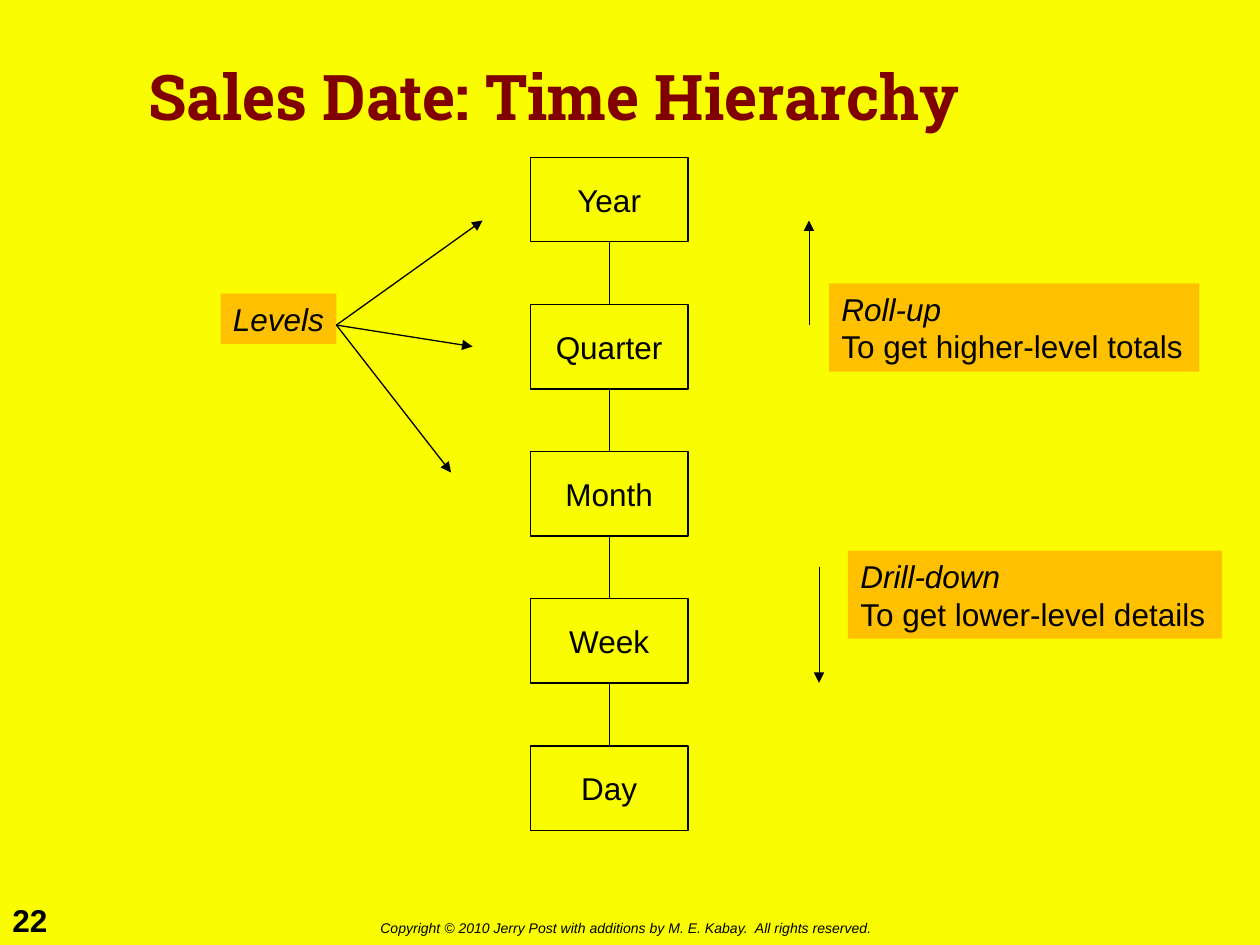
from lxml import etree
from pptx import Presentation
from pptx.dml.color import RGBColor
from pptx.enum.shapes import MSO_CONNECTOR as CONN, MSO_SHAPE as SHAPE
from pptx.enum.text import MSO_ANCHOR as ANCHOR, MSO_AUTO_SIZE as AUTO, PP_ALIGN as ALIGN
from pptx.oxml.ns import qn
from pptx.util import Inches, Pt

YELLOW = RGBColor(0xFA, 0xFD, 0x00)
ORANGE = RGBColor(0xFF, 0xC0, 0x00)
MAROON = RGBColor(0x80, 0x00, 0x00)
BLACK = RGBColor(0x00, 0x00, 0x00)
BOTTOM, TOP = 2, 0


def add_text(p, text, size=18, font="Arial", color=BLACK, bold=False, italic=False):
    r = p.add_run()
    r.text = text
    r.font.name, r.font.size = font, Pt(size)
    r.font.bold, r.font.italic = bold, italic
    r.font.color.rgb = color


class SlideBuilder:
    def __init__(self, slide):
        self.s = slide
        fill = slide.background.fill
        fill.solid()
        fill.fore_color.rgb = YELLOW

    def title(self, text, x, y, w, h):
        sp = self.s.shapes.title
        sp.left, sp.top, sp.width, sp.height = map(Inches, (x, y, w, h))
        tf = sp.text_frame
        tf.vertical_anchor = ANCHOR.MIDDLE
        p = tf.paragraphs[0]
        p.alignment, p.line_spacing = ALIGN.LEFT, 0.9
        add_text(p, text, size=36, font="Roboto Slab", color=MAROON, bold=True)

    def label(self, text, x, y, w, h, **style):
        sp = self.s.shapes.add_textbox(*map(Inches, (x, y, w, h)))
        tf = sp.text_frame
        tf.word_wrap, tf.auto_size = False, AUTO.SHAPE_TO_FIT_TEXT
        add_text(tf.paragraphs[0], text, **style)

    def rect(self, x, y, w, h):
        sp = self.s.shapes.add_shape(SHAPE.RECTANGLE, *map(Inches, (x, y, w, h)))
        sp.shadow.inherit = False
        sp.text_frame.word_wrap = False
        return sp

    def level(self, text, x, y, w, h):
        sp = self.rect(x, y, w, h)
        sp.fill.background()
        sp.line.color.rgb, sp.line.width = BLACK, Pt(0.75)
        tf = sp.text_frame
        tf.vertical_anchor = ANCHOR.MIDDLE
        tf.paragraphs[0].alignment = ALIGN.CENTER
        add_text(tf.paragraphs[0], text)
        return sp

    def callout(self, term, x, y, w, h, meaning=None):
        sp = self.rect(x, y, w, h)
        sp.fill.solid()
        sp.fill.fore_color.rgb = ORANGE
        sp.line.fill.background()
        tf = sp.text_frame
        tf.vertical_anchor, tf.auto_size = ANCHOR.TOP, AUTO.SHAPE_TO_FIT_TEXT
        tf.paragraphs[0].alignment = ALIGN.LEFT
        add_text(tf.paragraphs[0], term, italic=True)
        if meaning:
            p = tf.add_paragraph()
            p.alignment = ALIGN.LEFT
            add_text(p, meaning)

    def line(self, start=(0, 0), end=(0, 0), width=0.75, arrow=False):
        cx = self.s.shapes.add_connector(CONN.STRAIGHT, *map(Inches, start + end))
        cx.line.color.rgb, cx.line.width = BLACK, Pt(width)
        if arrow:
            etree.SubElement(cx.line._get_or_add_ln(), qn("a:tailEnd"), type="triangle")
        etree.SubElement(cx._element.spPr, qn("a:effectLst"))
        return cx

    def join(self, upper, lower):
        cx = self.line()
        cx.begin_connect(upper, BOTTOM)
        cx.end_connect(lower, TOP)


def main():
    prs = Presentation()
    prs.slide_width, prs.slide_height = Inches(10), Inches(7.5)
    b = SlideBuilder(prs.slides.add_slide(prs.slide_layouts[5]))

    # Footer and title
    b.label("22", 0, 7.1, 0.51, 0.4, bold=True)
    b.label("Copyright © 2010 Jerry Post with additions by M. E. Kabay.  All rights reserved.",
            2.92, 7.25, 4.22, 0.24, size=8, italic=True)
    b.title("Sales Date: Time Hierarchy", 1.08, 0.17, 7.83, 1.25)

    # Time hierarchy, evenly spaced from top to bottom
    names = ["Year", "Quarter", "Month", "Week", "Day"]
    first, last = 1.25, 5.92
    step = (last - first) / (len(names) - 1)
    levels = [b.level(name, 4.21, first + i * step, 1.25, 0.67)
              for i, name in enumerate(names)]
    for upper, lower in zip(levels, levels[1:]):
        b.join(upper, lower)

    # Levels callout with its arrows
    b.callout("Levels", 1.75, 2.33, 0.92, 0.4)
    for tip in [(3.83, 1.75), (3.75, 2.75), (3.58, 3.75)]:
        b.line((2.67, 2.58), tip, arrow=True)

    # Directions of travel
    b.callout("Roll-up", 6.58, 2.25, 2.94, 0.7, meaning="To get higher-level totals")
    b.line((6.42, 2.58), (6.42, 1.75), width=0.25, arrow=True)
    b.callout("Drill-down", 6.73, 4.37, 2.97, 0.7, meaning="To get lower-level details")
    b.line((6.5, 4.5), (6.5, 5.42), width=0.25, arrow=True)

    prs.save("out.pptx")


if __name__ == "__main__":
    main()
